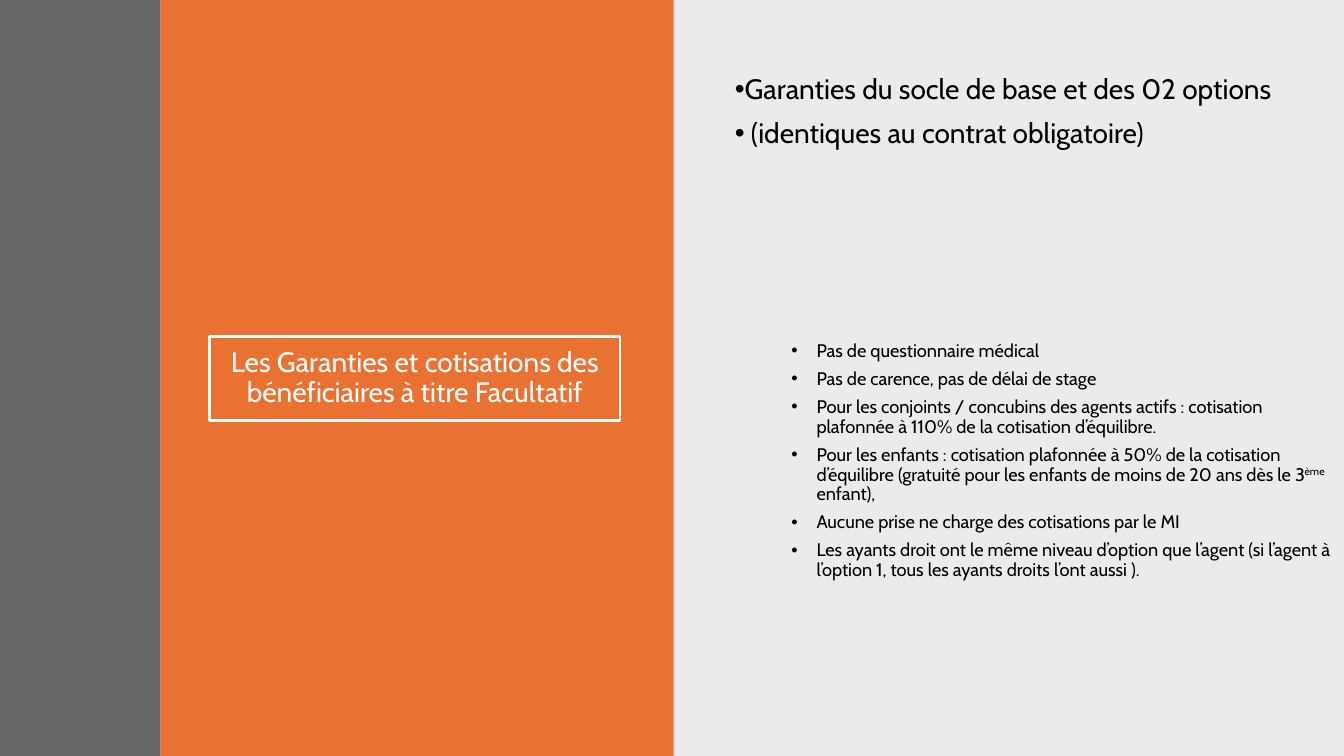
"""Builds the slide on guarantees and contributions of optional beneficiaries."""
from lxml import etree
from pptx import Presentation
from pptx.dml.color import RGBColor
from pptx.enum.shapes import MSO_SHAPE
from pptx.enum.text import MSO_ANCHOR, PP_ALIGN
from pptx.oxml.ns import qn
from pptx.util import Inches, Pt

RECTANGLE = MSO_SHAPE.RECTANGLE
MIDDLE = MSO_ANCHOR.MIDDLE
CENTER = PP_ALIGN.CENTER
BLACK = RGBColor(0x00, 0x00, 0x00)
WHITE = RGBColor(0xFF, 0xFF, 0xFF)
ORANGE = RGBColor(0xE9, 0x71, 0x32)
DARK_GREY = RGBColor(0x66, 0x66, 0x66)
LIGHT_GREY = RGBColor(0xEB, 0xEB, 0xEB)
FONT = "Cabin"

GUARANTEES = [
    "Garanties du socle de base et des 02 options",
    " (identiques au contrat obligatoire)",
]
CONDITIONS = [
    "Pas de questionnaire médical",
    "Pas de carence, pas de délai de stage",
    "Pour les conjoints / concubins des agents actifs : cotisation plafonnée à 110% "
    "de la cotisation d’équilibre.",
    "Pour les enfants : cotisation plafonnée à 50% de la cotisation d’équilibre "
    "(gratuité pour les enfants de moins de 20 ans dès le 3^ème^ enfant),",
    "Aucune prise ne charge des cotisations par le MI",
    "Les ayants droit ont le même niveau d’option que l’agent (si l’agent à l’option 1, "
    "tous les ayants droits l’ont aussi ).",
]


def style_text(paragraph, size, color):
    paragraph.line_spacing = 0.9
    for run in paragraph.runs:
        run.font.name = FONT
        run.font.size = Pt(size)
        run.font.color.rgb = color


def add_bullets(slide, box, items, size, level, margin, before, after):
    """Add a bulleted text box; text between carets is superscript."""
    text_frame = slide.shapes.add_textbox(*map(Inches, box)).text_frame
    text_frame.word_wrap = True
    for index, item in enumerate(items):
        paragraph = text_frame.add_paragraph() if index else text_frame.paragraphs[0]
        paragraph.level = level
        properties = paragraph._p.get_or_add_pPr()
        properties.set("marL", str(Inches(margin)))
        properties.set("indent", str(Inches(-0.25)))
        etree.SubElement(properties, qn("a:buFont")).set("typeface", "Arial")
        etree.SubElement(properties, qn("a:buChar")).set("char", "•")
        paragraph.space_before = Pt(before if index else 0)
        paragraph.space_after = Pt(after)
        for position, part in enumerate(item.split("^")):
            run = paragraph.add_run()
            run.text = part
            if position % 2:
                run._r.get_or_add_rPr().set("baseline", "30000")
        style_text(paragraph, size, BLACK)


presentation = Presentation()
presentation.slide_width = Inches(13.33)
presentation.slide_height = Inches(7.5)
slide = presentation.slides.add_slide(presentation.slide_layouts[6])

for left, width, color in [
    (6.67, 6.67, LIGHT_GREY),
    (1.59, 5.09, ORANGE),
    (0, 1.59, DARK_GREY),
]:
    panel = slide.shapes.add_shape(
        RECTANGLE, Inches(left), Inches(0), Inches(width), Inches(7.5)
    )
    panel.shadow.inherit = False
    panel.fill.solid()
    panel.fill.fore_color.rgb = color
    panel.line.fill.background()

title = slide.shapes.add_shape(
    RECTANGLE, Inches(2.08), Inches(3.34), Inches(4.07), Inches(0.83)
)
title.shadow.inherit = False
title.fill.background()
title.line.color.rgb = WHITE
title.line.width = Pt(2)
title.text_frame.text = "Les Garanties et cotisations des bénéficiaires à titre Facultatif"
title.text_frame.word_wrap = True
title.text_frame.vertical_anchor = MIDDLE
title.text_frame.paragraphs[0].alignment = CENTER
style_text(title.text_frame.paragraphs[0], 20, WHITE)

add_bullets(slide, (7.19, 0.7, 5.53, 2.79), GUARANTEES, 20, 0, 0, 10, 0)
add_bullets(slide, (7.19, 3.34, 6.15, 4.05), CONDITIONS, 13, 1, 0.81, 0, 6)

presentation.save("out.pptx")
